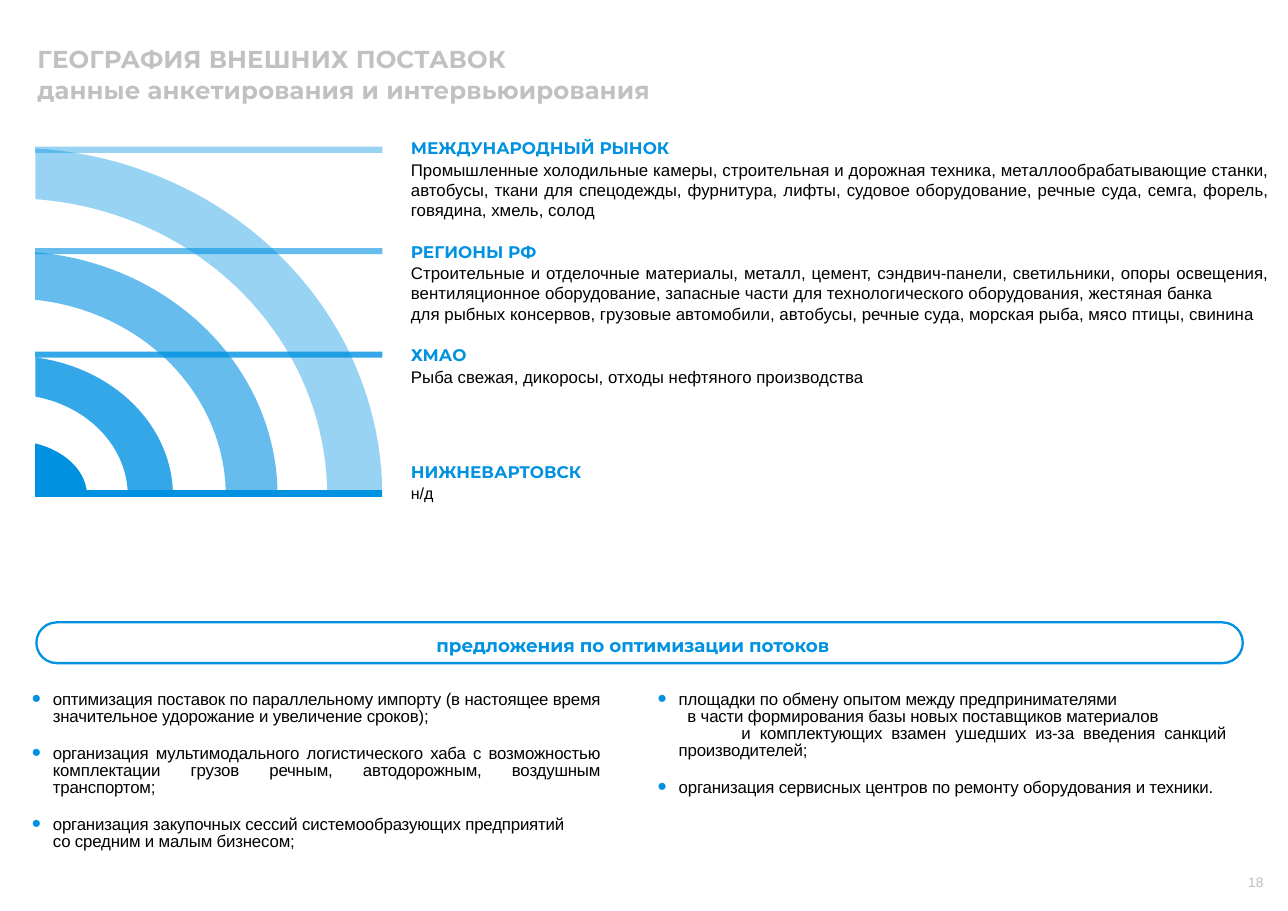
from math import acos, cos, sin

from pptx import Presentation
from pptx.dml.color import RGBColor
from pptx.enum.shapes import MSO_CONNECTOR, MSO_SHAPE
from pptx.enum.text import MSO_ANCHOR, MSO_AUTO_SIZE, PP_ALIGN
from pptx.oxml.ns import qn
from pptx.oxml.xmlchemy import OxmlElement
from pptx.util import Inches, Pt

BLUE = "0092E1"
LEFT, JUSTIFY, CENTER = PP_ALIGN.LEFT, PP_ALIGN.JUSTIFY, PP_ALIGN.CENTER

HEADING = {"name": "Montserrat", "size": Pt(16), "bold": True}
MARKET = {"name": "Montserrat", "size": Pt(11), "bold": True}
BANNER = {"name": "Montserrat", "size": Pt(12), "bold": True}
BODY = {"name": "Arial", "size": Pt(11), "bold": False}
SMALL_BODY = {**BODY, "size": Pt(10.5)}
PAGE = {**BODY, "size": Pt(9)}

# Quarter rings share one centre and are cut off at the left edge.
CENTER_X, BASE_Y, EDGE_X, BAR_END = 0.1, 4.5, 0.32, 3.47
ARC_STEPS = 40

# opacity %, bar height, outer radii, inner radii
RINGS = [
    (40, 1.36, (3.37, 3.16), (2.87, 2.7)),
    (60, 2.28, (2.42, 2.22), (1.95, 1.79)),
    (80, 3.22, (1.47, 1.27), (1.06, 0.92)),
    (100, 4.48, (0.69, 0.5), None),
]

# top, name, goods by paragraph, alignment, goods font
MARKETS = [
    (1.24, "МЕЖДУНАРОДНЫЙ РЫНОК",
     ["Промышленные холодильные камеры, строительная и дорожная техника, "
      "металлообрабатывающие станки, автобусы, ткани для спецодежды, фурнитура, лифты, "
      "судовое оборудование, речные суда, семга, форель, говядина, хмель, солод"],
     JUSTIFY, BODY),
    (2.18, "РЕГИОНЫ РФ",
     ["Строительные и отделочные материалы, металл, цемент, сэндвич-панели, светильники, "
      "опоры освещения, вентиляционное оборудование, запасные части для технологического "
      "оборудования, жестяная банка",
      "для рыбных консервов, грузовые автомобили, автобусы, речные суда, морская рыба, "
      "мясо птицы, свинина"], JUSTIFY, BODY),
    (3.12, "ХМАО", ["Рыба свежая, дикоросы, отходы нефтяного производства"], LEFT, BODY),
    (4.18, "НИЖНЕВАРТОВСК", ["н/д"], LEFT, SMALL_BODY),
]

# text, left margin, first-line indent, bulleted
SUPPLY_IDEAS = [
    ("оптимизация поставок по параллельному импорту (в настоящее время значительное "
     "удорожание и увеличение сроков);", 0.2, -0.19, True),
    ("организация мультимодального логистического хаба с возможностью комплектации грузов "
     "речным, автодорожным, воздушным транспортом;", 0.2, -0.19, True),
    ("организация закупочных сессий системообразующих предприятий", 0.2, -0.19, True),
    ("со средним и малым бизнесом;", 0.2, 0, False),
]
SERVICE_IDEAS = [
    ("площадки по обмену опытом между предпринимателями", 0.2, -0.19, True),
    ("в части формирования базы новых поставщиков материалов", 0.28, 0, False),
    ("и комплектующих взамен ушедших из-за введения санкций производителей;",
     0.2, 0.57, False),
    ("организация сервисных центров по ремонту оборудования и техники.", 0.2, -0.19, True),
]


def rgb(color):
    return RGBColor.from_string(color)


def place(shape, left, top, width, height):
    box = {"left": left, "top": top, "width": width, "height": height}
    for side, length in box.items():
        setattr(shape, side, Inches(length))


def prepare_frame(shape, insets, anchor=MSO_ANCHOR.TOP, auto_size=MSO_AUTO_SIZE.SHAPE_TO_FIT_TEXT):
    frame = shape.text_frame
    for side, inset in zip(("left", "top", "right", "bottom"), insets):
        setattr(frame, f"margin_{side}", Inches(inset))
    frame.word_wrap = True
    frame.vertical_anchor = anchor
    frame.auto_size = auto_size
    return frame


def write_paragraph(frame, text, font, color, align=LEFT, before=1, tracking=0):
    """Fill the first empty paragraph or add one; tracking is in 1/100 pt."""
    paragraph = frame.paragraphs[0] if not frame.text else frame.add_paragraph()
    paragraph.alignment = align
    paragraph.space_before = Pt(before)
    run = paragraph.add_run()
    run.text = text
    for key, value in font.items():
        setattr(run.font, key, value)
    run.font.color.rgb = rgb(color)
    run.font._element.set("spc", str(tracking))
    return paragraph


def set_bullet(paragraph, margin, indent, bulleted):
    properties = paragraph._p.get_or_add_pPr()
    properties.set("marL", str(Inches(margin)))
    properties.set("indent", str(Inches(indent)))
    if not bulleted:
        properties.append(OxmlElement("a:buNone"))
        return
    bullet_color = OxmlElement("a:buClr")
    swatch = OxmlElement("a:srgbClr")
    swatch.set("val", BLUE)
    bullet_color.append(swatch)
    properties.append(bullet_color)
    for tag, key, value in (("a:buSzPct", "val", "155000"),
                            ("a:buFont", "typeface", "Arial"),
                            ("a:buChar", "char", "•")):
        part = OxmlElement(tag)
        part.set(key, value)
        properties.append(part)


def fill_ideas(placeholder, left, height, ideas):
    place(placeholder, left, 6.27, 5.17, height)
    frame = prepare_frame(placeholder, (0, 0.01, 0, 0))
    for number, (text, margin, indent, bulleted) in enumerate(ideas):
        before = 1 if number == 0 else 13 if bulleted else 0
        paragraph = write_paragraph(frame, text, BODY, "000000", JUSTIFY, before, -14)
        paragraph.line_spacing = Pt(11.1)
        set_bullet(paragraph, margin, indent, bulleted)


def set_opacity(shape, percent):
    for swatch in shape._element.spPr.iter(qn("a:srgbClr")):
        alpha = OxmlElement("a:alpha")
        alpha.set("val", str(percent * 1000))
        swatch.append(alpha)


def arc_points(radius_x, radius_y):
    """Points from the base line up to the cut at the left edge."""
    sweep = acos((EDGE_X - CENTER_X) / radius_x)
    angles = [sweep * step / ARC_STEPS for step in range(ARC_STEPS + 1)]
    return [(CENTER_X + radius_x * cos(a), BASE_Y - radius_y * sin(a)) for a in angles]


def add_ring(slide, opacity, outer, inner):
    near_side = arc_points(*inner)[::-1] if inner else [(EDGE_X, BASE_Y)]
    outline = [(Inches(x), Inches(y)) for x, y in arc_points(*outer) + near_side]
    builder = slide.shapes.build_freeform(*outline[0])
    builder.add_line_segments(outline[1:], close=True)
    ring = builder.convert_to_shape()
    ring.shadow.inherit = False
    ring.fill.solid()
    ring.fill.fore_color.rgb = rgb(BLUE)
    ring.line.fill.background()
    set_opacity(ring, opacity)


def add_bar(slide, opacity, y):
    bar = slide.shapes.add_connector(
        MSO_CONNECTOR.STRAIGHT, Inches(EDGE_X), Inches(y), Inches(BAR_END), Inches(y))
    bar.line.color.rgb = rgb(BLUE)
    bar.line.width = Pt(4)
    set_opacity(bar, opacity)
    bar._element.spPr.append(OxmlElement("a:effectLst"))


def add_market(slide, top, name, goods, align, font):
    block = slide.shapes.add_textbox(Inches(3.72), Inches(top), Inches(7.8), Inches(0.4))
    frame = prepare_frame(block, (0.01, 0.01, 0, 0))
    write_paragraph(frame, name, MARKET, BLUE)
    for number, text in enumerate(goods):
        write_paragraph(frame, text, font, "000000", align, 0 if number else 1)


def add_banner(slide, text):
    banner = slide.shapes.add_shape(
        MSO_SHAPE.ROUNDED_RECTANGLE, Inches(0.33), Inches(5.65), Inches(10.95), Inches(0.37))
    banner.adjustments[0] = 0.5
    banner.shadow.inherit = False
    banner.fill.background()
    banner.line.color.rgb = rgb(BLUE)
    banner.line.width = Pt(1.5)
    frame = prepare_frame(banner, (0, 0.05, 0.12, 0), MSO_ANCHOR.MIDDLE, MSO_AUTO_SIZE.NONE)
    write_paragraph(frame, text, BANNER, BLUE, CENTER, 0, -6)


def main():
    deck = Presentation()
    deck.slide_width, deck.slide_height = Inches(11.69), Inches(8.27)
    slide = deck.slides.add_slide(deck.slide_layouts[3])
    title, supply, service = slide.placeholders

    place(title, 0.33, 0.35, 11.09, 0.65)
    heading = prepare_frame(title, (0.01, 0.05, 0.1, 0.05))
    for line in ("ГЕОГРАФИЯ ВНЕШНИХ ПОСТАВОК", "данные анкетирования и интервьюирования"):
        write_paragraph(heading, line, HEADING, "C0C1C2", tracking=12)

    for opacity, bar_y, outer, inner in RINGS:
        add_ring(slide, opacity, outer, inner)
        add_bar(slide, opacity, bar_y)
    for market in MARKETS:
        add_market(slide, *market)

    add_banner(slide, "предложения по оптимизации потоков")
    fill_ideas(supply, 0.28, 1.44, SUPPLY_IDEAS)
    fill_ideas(service, 5.96, 0.96, SERVICE_IDEAS)

    page = slide.shapes.add_textbox(Inches(11.23), Inches(7.88), Inches(0.45), Inches(0.27))
    write_paragraph(prepare_frame(page, (0.1, 0.05, 0.1, 0.05)), "18", PAGE, "BFBFBF", before=0)
    deck.save("out.pptx")


if __name__ == "__main__":
    main()
